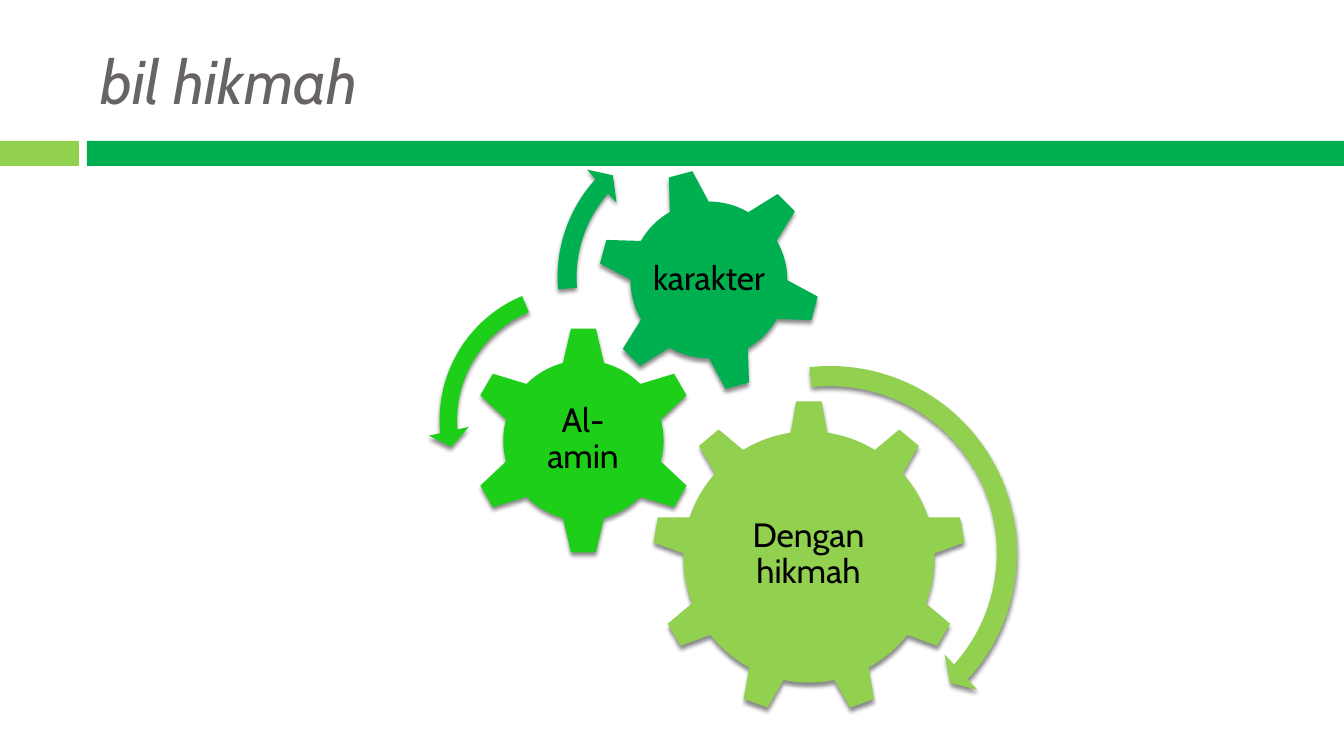
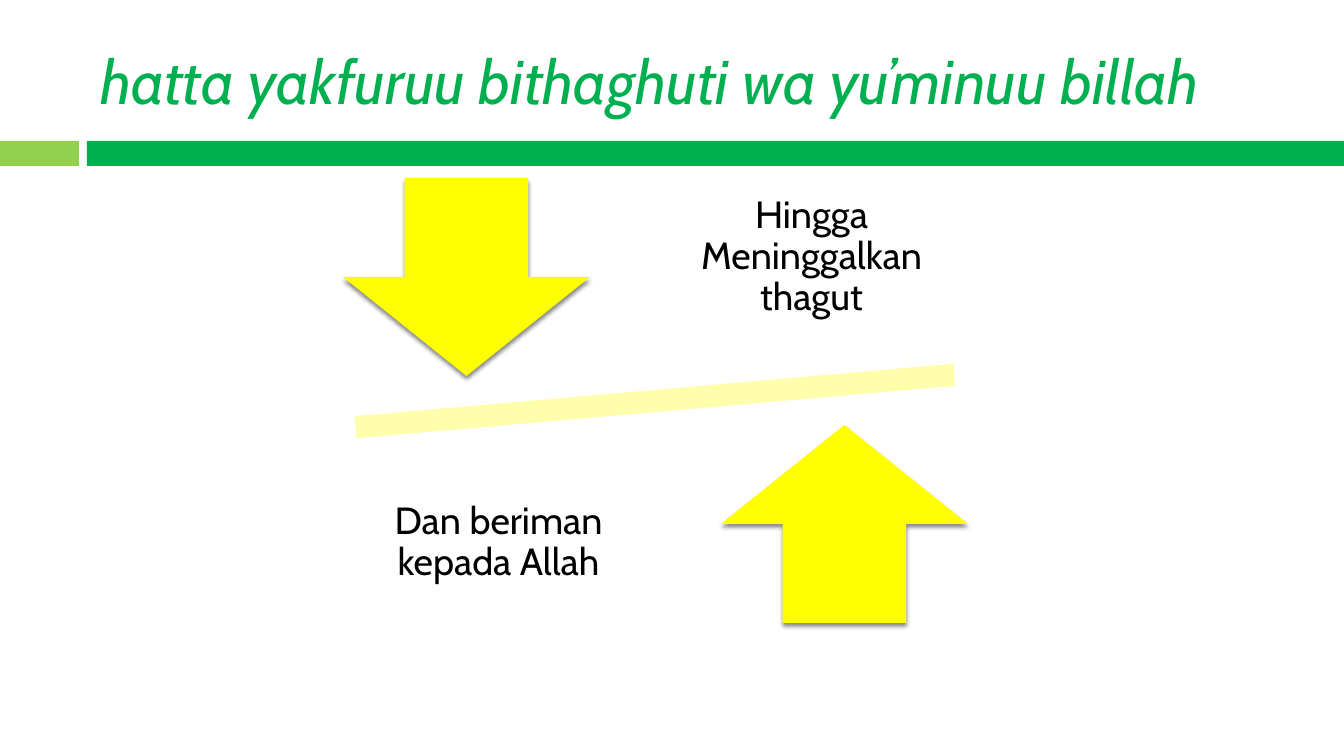
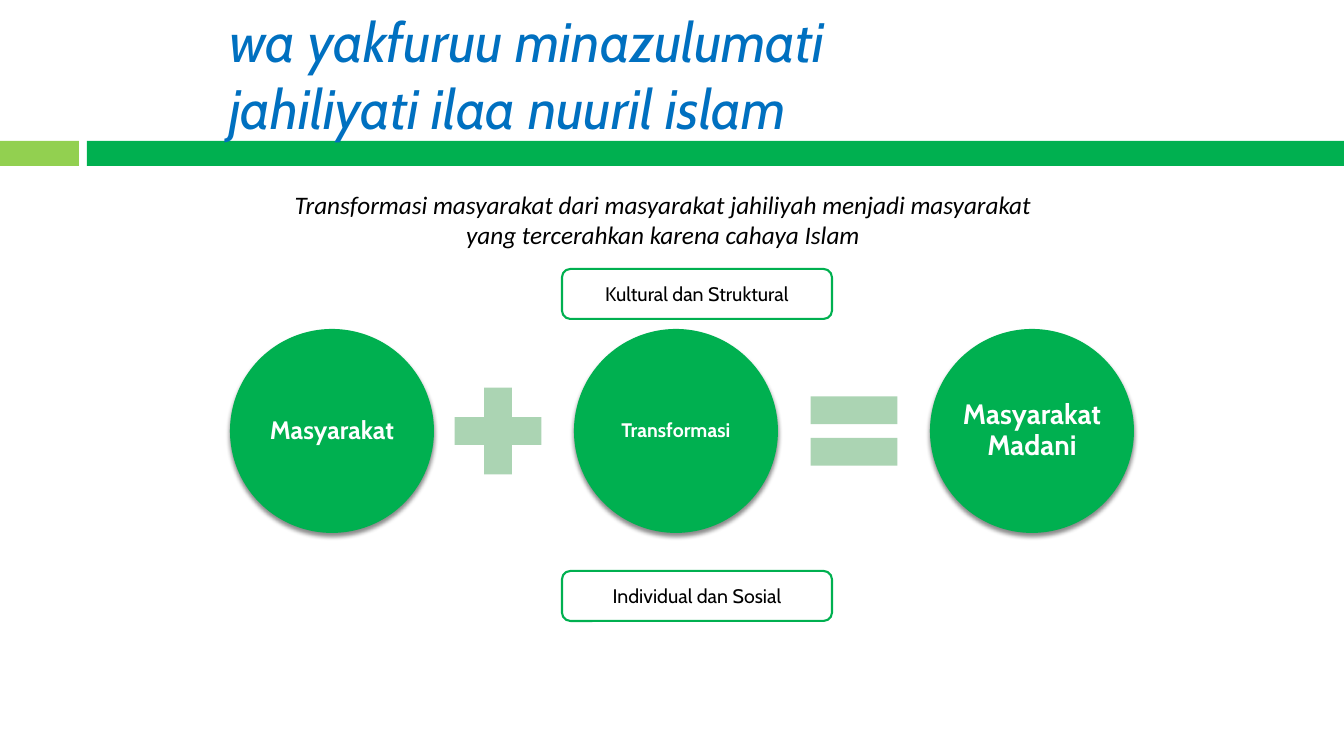
from dataclasses import dataclass

from lxml import etree
from pptx import Presentation
from pptx import util as u
from pptx.dml.color import RGBColor
from pptx.enum import shapes, text
from pptx.oxml.ns import qn

PX = 914400 / 100.8
G = shapes.MSO_SHAPE
TITLE_ONLY = 5


@dataclass(frozen=True)
class Theme:
    font: str = "Cabin"
    note_font: str = "Calibri"
    black: str = "000000"
    white: str = "FFFFFF"
    grey: str = "696464"
    blue: str = "0070C0"
    green: str = "00B050"
    lime: str = "92D050"
    bright: str = "1ECF19"
    sage: str = "ABD4B3"
    yellow: str = "FFFF00"
    cream: str = "FFFFAB"
    title: float = 44
    title_small: float = 39.6
    scale_label: float = 27
    gear_label: float = 24
    circle_large: float = 20
    note: float = 18
    small: float = 14


T = Theme()


def px(n):
    return u.Emu(round(n * PX))


def box(left, top, width, height):
    return [px(n) for n in (left, top, width, height)]


def rgb(color):
    return RGBColor.from_string(color)


def write(sp, words, size, color=T.black, font=T.font, align=text.PP_ALIGN.CENTER,
          anchor=text.MSO_ANCHOR.MIDDLE, bold=False, italic=False,
          inset=None, spacing=None):
    tf = sp.text_frame
    tf.word_wrap = True
    tf.auto_size = text.MSO_AUTO_SIZE.NONE
    tf.vertical_anchor = anchor
    if inset is not None:
        tf.margin_left = tf.margin_top = tf.margin_right = tf.margin_bottom = px(inset)
    p = tf.paragraphs[0]
    p.text = words
    p.alignment = align
    if spacing:
        p.line_spacing = spacing
    f = p.font
    f.name, f.size, f.bold, f.italic = font, u.Pt(size), bold, italic
    f.color.rgb = rgb(color)


def add_shape(slide, kind, at, fill, line=None, rotation=0, adjust=(), shadow=False):
    sp = slide.shapes.add_shape(kind, *box(*at))
    sp.rotation = rotation
    for i, value in enumerate(adjust):
        sp.adjustments[i] = value
    sp.fill.solid()
    sp.fill.fore_color.rgb = rgb(fill)
    if line:
        sp.line.color.rgb = rgb(line)
        sp.line.width = u.Pt(1.5)
    else:
        sp.line.fill.background()
    sp.shadow.inherit = False
    if shadow:
        cast_shadow(sp)
    return sp


def cast_shadow(sp):
    effects = sp.element.spPr.find(qn("a:effectLst"))
    outer = etree.SubElement(effects, qn("a:outerShdw"), blurRad=str(u.Pt(3)),
                             dist=str(u.Pt(2.4)), dir="5400000", rotWithShape="0")
    color = etree.SubElement(outer, qn("a:srgbClr"), val=T.black)
    etree.SubElement(color, qn("a:alpha"), val="45000")


def add_label(slide, at, words, size, inset):
    sp = slide.shapes.add_textbox(*box(*at))
    write(sp, words, size, inset=inset, spacing=0.9)


def add_slide(prs, title, color, size=T.title, at=(90, 25, 1199, 109)):
    slide = prs.slides.add_slide(prs.slide_layouts[TITLE_ONLY])
    sp = slide.shapes.title
    sp.left, sp.top, sp.width, sp.height = box(*at)
    write(sp, title, size, color, align=text.PP_ALIGN.LEFT, italic=True)
    return slide


def put_bands_on_master(prs, slide):
    for left, width, color in ((0, 79, T.lime), (87, 1257, T.green)):
        band = add_shape(slide, G.RECTANGLE, (left, 141, width, 25), color)
        prs.slide_master.shapes.element.append(band.element)


def fill_gears(slide):
    gears = (
        (G.GEAR_9, (652, 400, 314, 314), T.lime, 0, "Dengan hikmah", (715, 474, 187, 161)),
        (G.GEAR_6, (469, 326, 229, 229), T.bright, 0, "Al-amin", (526, 383, 114, 113)),
        (G.GEAR_6, (597, 168, 224, 224), T.green, 345, "karakter", (646, 217, 126, 126)),
    )
    for kind, at, color, rotation, words, label_at in gears:
        add_shape(slide, kind, at, color, rotation=rotation, shadow=True)
        add_label(slide, label_at, words, T.gear_label, inset=3)

    arrows = (
        (G.CIRCULAR_ARROW, (629, 352, 402, 402), T.lime, (0.05, 2.99, 25.36, 158.2, 0.06)),
        (G.LEFT_CIRCULAR_ARROW, (428, 274, 292, 292), T.bright,
         (0.06, 4.3, 104.89, 148.38, 0.07)),
        (G.CIRCULAR_ARROW, (545, 119, 316, 316), T.green, (0.06, 3.94, 133.14, 105.08, 0.07)),
    )
    for kind, at, color, adjust in arrows:
        add_shape(slide, kind, at, color, adjust=adjust, shadow=True)


def fill_scale(slide):
    add_shape(slide, G.MATH_MINUS, (246, 354, 818, 94), T.cream, rotation=355)
    sides = (
        (G.DOWN_ARROW, (343, 178), "Hingga Meninggalkan thagut", (680, 154)),
        (G.UP_ARROW, (721, 425), "Dan beriman kepada Allah", (367, 439)),
    )
    for kind, arrow_at, words, label_at in sides:
        add_shape(slide, kind, (*arrow_at, 247, 198), T.yellow, shadow=True)
        add_label(slide, (*label_at, 263, 207), words, T.scale_label, inset=21)


def fill_equation(slide):
    circles = (
        (230, "Masyarakat", T.note),
        (574, "Transformasi", T.small),
        (930, "Masyarakat Madani", T.circle_large),
    )
    for left, words, size in circles:
        sp = add_shape(slide, G.OVAL, (left, 329, 204, 204), T.green, shadow=True)
        write(sp, words, size, T.white, bold=True, inset=3, spacing=0.9)

    for kind, left in ((G.MATH_PLUS, 439), (G.MATH_EQUAL, 795)):
        add_shape(slide, kind, (left, 372, 118, 118), T.sage)

    for top, words in ((571, "Individual dan Sosial"), (269, "Kultural dan Struktural")):
        sp = add_shape(slide, G.ROUNDED_RECTANGLE, (562, top, 270, 50), T.white, line=T.green)
        write(sp, words, T.small)

    note = slide.shapes.add_textbox(*box(260, 184, 806, 72))
    write(note, "Transformasi masyarakat dari masyarakat jahiliyah menjadi masyarakat "
          "yang tercerahkan karena cahaya Islam", T.note, font=T.note_font,
          anchor=text.MSO_ANCHOR.TOP, italic=True)


def main():
    prs = Presentation()
    prs.slide_width, prs.slide_height = px(1344), px(756)

    slide = add_slide(prs, "bil hikmah", T.grey)
    put_bands_on_master(prs, slide)
    fill_gears(slide)

    fill_scale(add_slide(prs, "hatta yakfuruu bithaghuti wa yu’minuu billah", T.green))

    fill_equation(add_slide(prs, "wa yakfuruu minazulumati jahiliyati ilaa nuuril islam",
                            T.blue, T.title_small, (219, 30, 798, 88)))

    prs.save("out.pptx")


if __name__ == "__main__":
    main()
